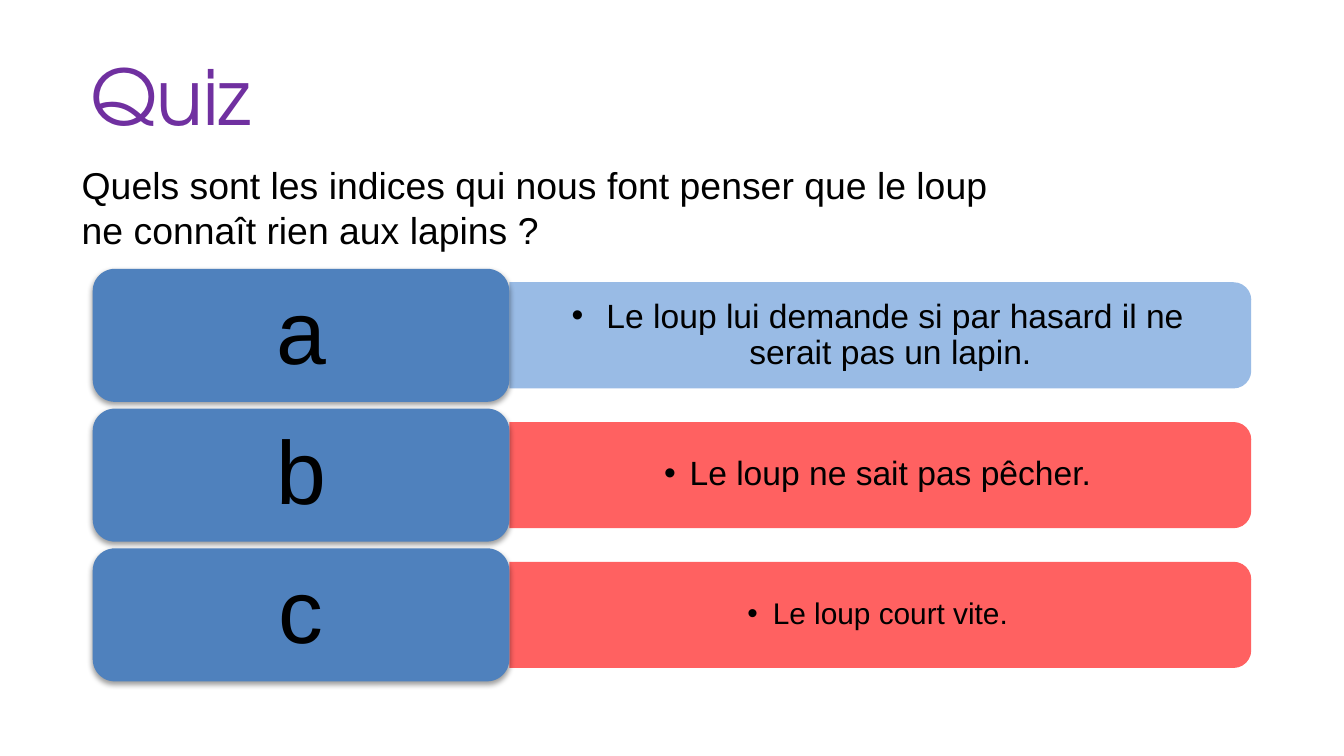
from lxml.etree import SubElement
from pptx import Presentation
from pptx.dml.color import RGBColor
from pptx.enum.shapes import MSO_SHAPE
from pptx.enum.text import MSO_ANCHOR, PP_ALIGN
from pptx.oxml import parse_xml
from pptx.oxml.ns import nsdecls, qn
from pptx.util import Inches, Pt

PURPLE = RGBColor(0x70, 0x30, 0xA0)
BLUE = RGBColor(0x4F, 0x81, 0xBD)
LIGHT_BLUE = RGBColor(0x8E, 0xB4, 0xE3)
RED = RGBColor(0xFF, 0x50, 0x50)
BLACK = RGBColor(0, 0, 0)

TITLE_FONT = "TeX Gyre Adventor"
BODY_FONT = "Arial"

QUESTION = ("Quels sont les indices qui nous font penser que le loup "
            "ne connaît rien aux lapins ?")
ANSWERS = [
    ("a", " Le loup lui demande si par hasard il ne serait pas un lapin.",
     LIGHT_BLUE, 18),
    ("b", "Le loup ne sait pas pêcher.", RED, 18),
    ("c", "Le loup court vite.", RED, 16),
]

LABEL_LEFT, LABEL_W, LABEL_H = 0.69, 3.1, 0.99
BAR_W, BAR_H = 5.52, 0.79
FIRST_TOP, ROW_PITCH = 2, 1.04


def set_margins(tf, x, y):
    tf.margin_left = tf.margin_right = Inches(x)
    tf.margin_top = tf.margin_bottom = Inches(y)


def write(tf, text, size, color=BLACK, font=BODY_FONT, align=PP_ALIGN.LEFT):
    tf.word_wrap = True
    p = tf.paragraphs[0]
    p.text = text
    p.alignment = align
    p.font.size = Pt(size)
    p.font.name = font
    p.font.color.rgb = color
    return p


def add_bullet(p):
    pPr = p._p.get_or_add_pPr()
    pPr.set("marL", str(Inches(0.19)))
    pPr.set("indent", str(-Inches(0.19)))
    for tag in (f'buFont {nsdecls("a")} typeface="{BODY_FONT}"',
                f'buChar {nsdecls("a")} char="•"'):
        pPr.insert_element_before(parse_xml(f"<a:{tag}/>"),
                                  "a:tabLst", "a:defRPr", "a:extLst")


def add_soft_shadow(sp):
    sp.shadow.inherit = False
    effects = sp._element.spPr.find(qn("a:effectLst"))
    shadow = SubElement(effects, qn("a:outerShdw"), blurRad=str(Pt(3.1)),
                        dist=str(Pt(1.6)), dir="5400000", rotWithShape="0")
    color = SubElement(shadow, qn("a:srgbClr"), val="000000")
    SubElement(color, qn("a:alpha"), val="38000")


def add_title(s):
    title = s.shapes.title
    title.left, title.top = Inches(0.67), Inches(0.16)
    title.width, title.height = Inches(8.62), Inches(1.09)
    tf = title.text_frame
    set_margins(tf, 0, 0)
    tf.vertical_anchor = MSO_ANCHOR.MIDDLE
    write(tf, "Quiz", 41, PURPLE, TITLE_FONT)


def add_question(s):
    box = s.shapes.add_textbox(Inches(0.51), Inches(1.16),
                               Inches(7.14), Inches(0.77))
    write(box.text_frame, QUESTION, 20)


def add_bar(s, left, middle, color):
    """Bar with rounded right corners: an upright shape turned by 90 degrees."""
    sp = s.shapes.add_shape(
        MSO_SHAPE.ROUND_2_SAME_RECTANGLE,
        Inches(left + (BAR_W - BAR_H) / 2), Inches(middle - BAR_W / 2),
        Inches(BAR_H), Inches(BAR_W))
    sp.rotation = 90
    sp.shadow.inherit = False
    sp.fill.solid()
    sp.fill.fore_color.rgb = color
    srgb = sp._element.spPr.find(qn("a:solidFill")).find(qn("a:srgbClr"))
    SubElement(srgb, qn("a:alpha"), val="90000")
    sp.line.fill.background()


def add_answer_text(s, left, middle, text, size):
    height = 0.71
    box = s.shapes.add_textbox(Inches(left), Inches(middle - height / 2),
                               Inches(5.48), Inches(height))
    tf = box.text_frame
    set_margins(tf, 0.27, 0.14)
    tf.vertical_anchor = MSO_ANCHOR.MIDDLE
    p = write(tf, text, size, align=PP_ALIGN.CENTER)
    p.level = 1
    p.line_spacing = 0.9
    add_bullet(p)


def add_label(s, top, letter):
    sp = s.shapes.add_shape(MSO_SHAPE.ROUNDED_RECTANGLE,
                            Inches(LABEL_LEFT), Inches(top),
                            Inches(LABEL_W), Inches(LABEL_H))
    sp.fill.solid()
    sp.fill.fore_color.rgb = BLUE
    sp.line.fill.background()
    add_soft_shadow(sp)
    tf = sp.text_frame
    set_margins(tf, 0.2, 0.1)
    tf.vertical_anchor = MSO_ANCHOR.MIDDLE
    write(tf, letter, 48, align=PP_ALIGN.CENTER).line_spacing = 0.9


def main():
    prs = Presentation()
    prs.slide_width = Inches(10)
    prs.slide_height = prs.slide_width * 9 // 16
    s = prs.slides.add_slide(prs.slide_layouts[5])
    add_title(s)
    bar_left = LABEL_LEFT + LABEL_W
    for i, (letter, text, color, size) in enumerate(ANSWERS):
        top = FIRST_TOP + i * ROW_PITCH
        middle = top + LABEL_H / 2
        add_bar(s, bar_left, middle, color)
        add_answer_text(s, bar_left, middle, text, size)
        add_label(s, top, letter)
    add_question(s)
    prs.save("out.pptx")


if __name__ == "__main__":
    main()
